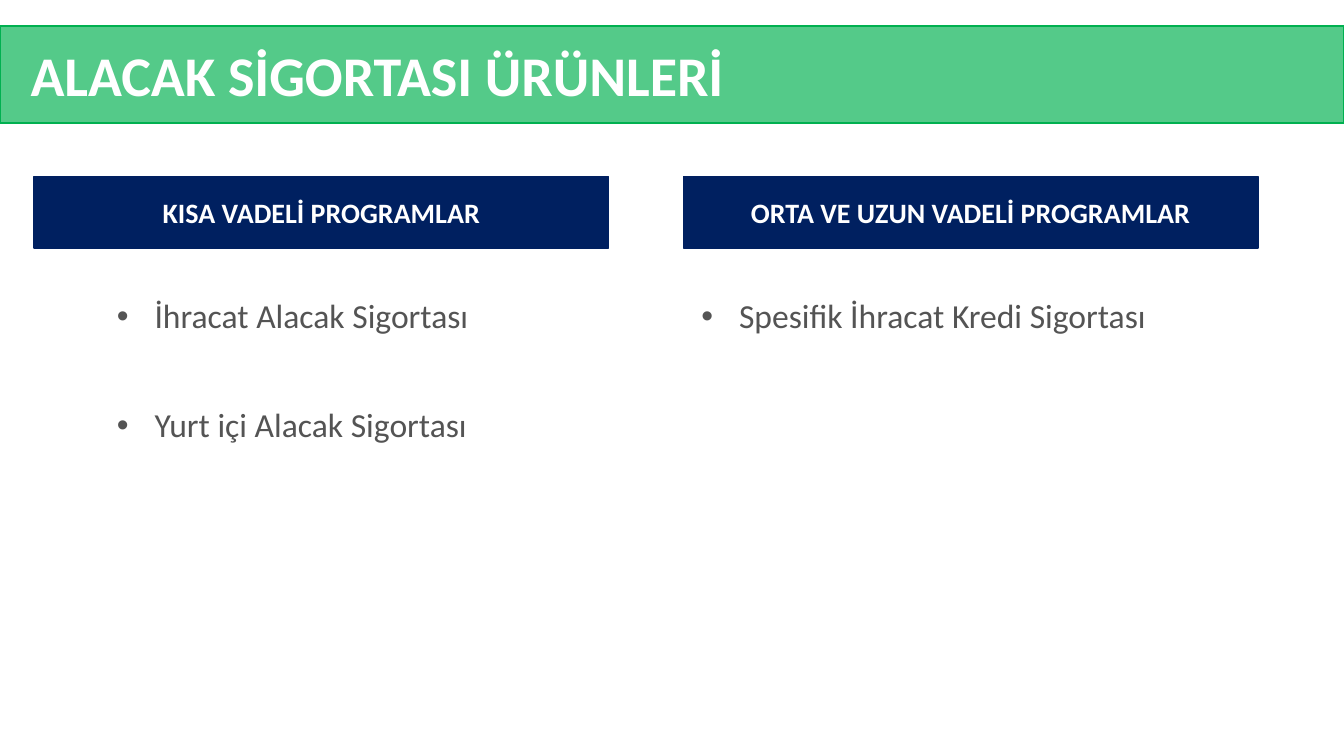
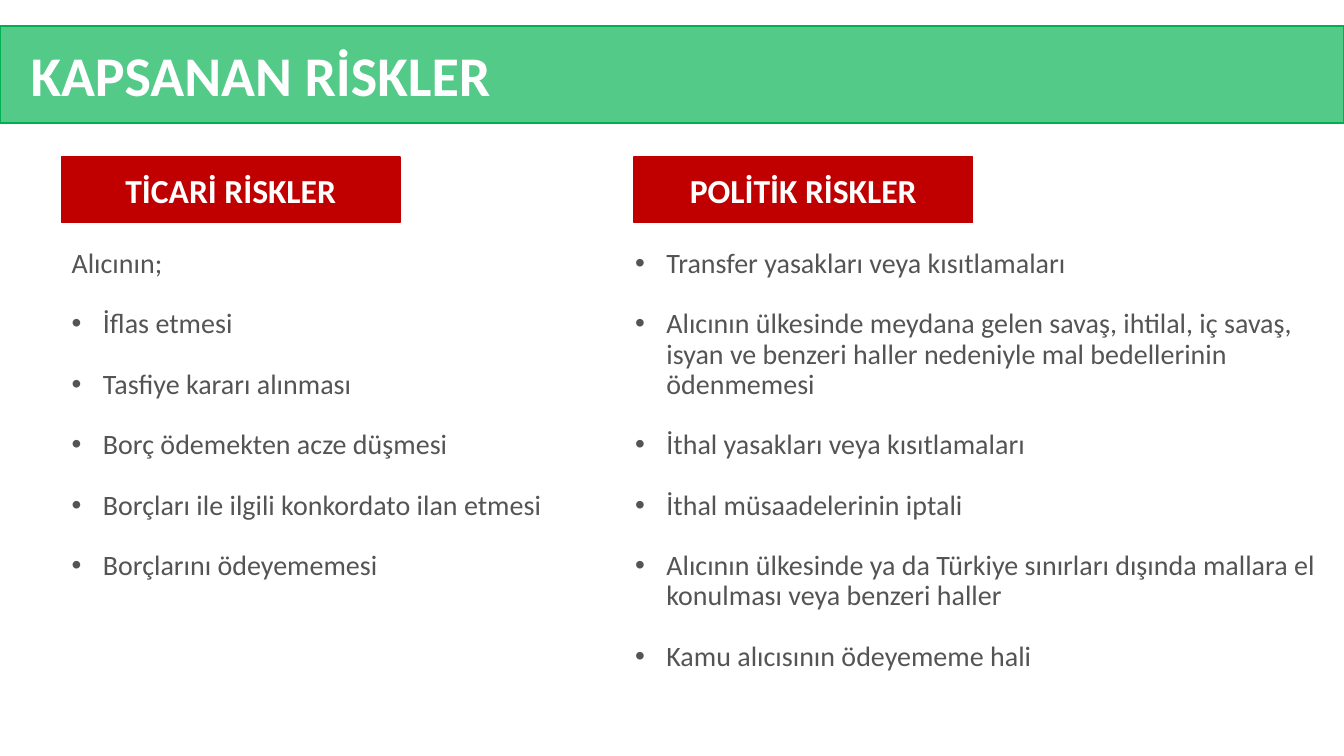
from dataclasses import dataclass

from lxml.etree import SubElement
from pptx import Presentation
from pptx.dml.color import RGBColor
from pptx.enum.shapes import MSO_SHAPE as Preset
from pptx.enum.text import MSO_ANCHOR as Anchor, MSO_AUTO_SIZE as AutoSize, PP_ALIGN as Align
from pptx.oxml.ns import qn
from pptx.util import Cm, Pt

# Shared look
FONT = "Calibri"
GREEN, NAVY, RED = "00B050", "002060", "C00000"
WHITE, GREY = "FFFFFF", "545454"
SLIDE_WIDTH, SLIDE_HEIGHT = 33.87, 19.05
BAND = (0, 0.66, SLIDE_WIDTH, 2.44)
BAND_OPACITY = 67
TWO_CONTENT_LAYOUT = 3


@dataclass
class Column:
    heading: str
    heading_left: float
    list_box: tuple
    items: list
    lead: str = ""


@dataclass
class Style:
    heading_color: str
    heading_size: int
    heading_top: float
    heading_width: float
    heading_height: float
    list_size: int
    list_indent: float
    list_gap: float


PRODUCT_STYLE = Style(NAVY, 20, 4.45, 14.48, 1.8, 24, 0.95, 52)
RISK_STYLE = Style(RED, 24, 3.96, 8.53, 1.65, 20, 0.79, 21.6)

# Content
PRODUCTS = [
    Column("KISA VADELİ PROGRAMLAR", 0.86, (2.69, 7.42, 13.21, 3.96),
           ["İhracat Alacak Sigortası", "Yurt içi Alacak Sigortası"]),
    Column("ORTA VE UZUN VADELİ PROGRAMLAR", 17.22, (17.42, 7.42, 13.77, 1.17),
           ["Spesifik İhracat Kredi Sigortası"]),
]
RISKS = [
    Column("TİCARİ RİSKLER", 1.55, (1.55, 6.15, 13.21, 8.71),
           ["İflas etmesi",
            "Tasfiye kararı alınması",
            "Borç ödemekten acze düşmesi",
            "Borçları ile ilgili konkordato ilan etmesi",
            "Borçlarını ödeyememesi"],
           lead="Alıcının;"),
    Column("POLİTİK RİSKLER", 15.98, (15.75, 6.15, 18.12, 11.79),
           ["Transfer yasakları veya kısıtlamaları",
            "Alıcının ülkesinde meydana gelen savaş, ihtilal, iç savaş, isyan ve benzeri "
            "haller nedeniyle mal bedellerinin ödenmemesi",
            "İthal yasakları veya kısıtlamaları",
            "İthal müsaadelerinin iptali",
            "Alıcının ülkesinde ya da Türkiye sınırları dışında mallara el konulması "
            "veya benzeri haller",
            "Kamu alıcısının ödeyememe hali"]),
]


# Helpers
def set_attributes(target, values):
    for name, value in values.items():
        setattr(target, name, value)


def rgb(color):
    return RGBColor.from_string(color)


def place(shape, box):
    set_attributes(shape, dict(zip(("left", "top", "width", "height"), map(Cm, box))))


def paint(shape, color, opacity=100):
    shape.fill.solid()
    shape.fill.fore_color.rgb = rgb(color)
    shape.line.color.rgb = rgb(color)
    shape.line.width = Pt(1)
    if opacity < 100:
        fill_color = shape.fill._xPr.find(qn("a:solidFill")).find(qn("a:srgbClr"))
        SubElement(fill_color, qn("a:alpha"), val=str(opacity * 1000))


def write(paragraph, text, size, color, bold=False):
    run = paragraph.add_run()
    run.text = text
    set_attributes(run.font, {"name": FONT, "size": Pt(size), "bold": bold})
    run.font.color.rgb = rgb(color)


def set_bullet(paragraph, indent):
    properties = paragraph._p.get_or_add_pPr()
    properties.set("marL", str(Cm(indent)))
    properties.set("indent", str(-Cm(indent)))
    if indent:
        SubElement(properties, qn("a:buFont"), typeface="Arial")
        SubElement(properties, qn("a:buChar"), char="•")
    else:
        SubElement(properties, qn("a:buNone"))


# Slide elements
def add_title(slide, text):
    title = slide.shapes.title
    place(title, BAND)
    paint(title, GREEN, BAND_OPACITY)
    frame = title.text_frame
    set_attributes(frame, {"vertical_anchor": Anchor.MIDDLE, "margin_left": Cm(0.77),
                           "word_wrap": True, "auto_size": AutoSize.NONE})
    paragraph = frame.paragraphs[0]
    paragraph.alignment = Align.LEFT
    write(paragraph, text, 40, WHITE, bold=True)


def add_heading(slide, column, style):
    heading = slide.shapes.add_shape(Preset.RECTANGLE, 0, 0, 0, 0)
    place(heading, (column.heading_left, style.heading_top,
                    style.heading_width, style.heading_height))
    heading.shadow.inherit = False
    paint(heading, style.heading_color)
    heading.text_frame.vertical_anchor = Anchor.MIDDLE
    paragraph = heading.text_frame.paragraphs[0]
    paragraph.alignment = Align.CENTER
    write(paragraph, column.heading, style.heading_size, WHITE, bold=True)


def fill_list(placeholder, column, style):
    place(placeholder, column.list_box)
    frame = placeholder.text_frame
    set_attributes(frame, {"vertical_anchor": Anchor.TOP, "word_wrap": True,
                           "auto_size": AutoSize.NONE})
    lines = [(item, style.list_indent) for item in column.items]
    if column.lead:
        lines.insert(0, (column.lead, 0))
    for index, (text, indent) in enumerate(lines):
        paragraph = frame.add_paragraph() if index else frame.paragraphs[0]
        set_bullet(paragraph, indent)
        set_attributes(paragraph, {"alignment": Align.LEFT, "line_spacing": 0.9,
                                   "space_before": Pt(style.list_gap if index else 0),
                                   "space_after": Pt(0)})
        write(paragraph, text, style.list_size, GREY)


def add_column_slide(presentation, title, columns, style):
    slide = presentation.slides.add_slide(presentation.slide_layouts[TWO_CONTENT_LAYOUT])
    add_title(slide, title)
    for number, column in enumerate(columns, start=1):
        add_heading(slide, column, style)
        fill_list(slide.placeholders[number], column, style)


def main():
    presentation = Presentation()
    set_attributes(presentation, {"slide_width": Cm(SLIDE_WIDTH),
                                  "slide_height": Cm(SLIDE_HEIGHT)})
    add_column_slide(presentation, "ALACAK SİGORTASI ÜRÜNLERİ", PRODUCTS, PRODUCT_STYLE)
    add_column_slide(presentation, "KAPSANAN RİSKLER", RISKS, RISK_STYLE)
    presentation.save("out.pptx")


if __name__ == "__main__":
    main()
